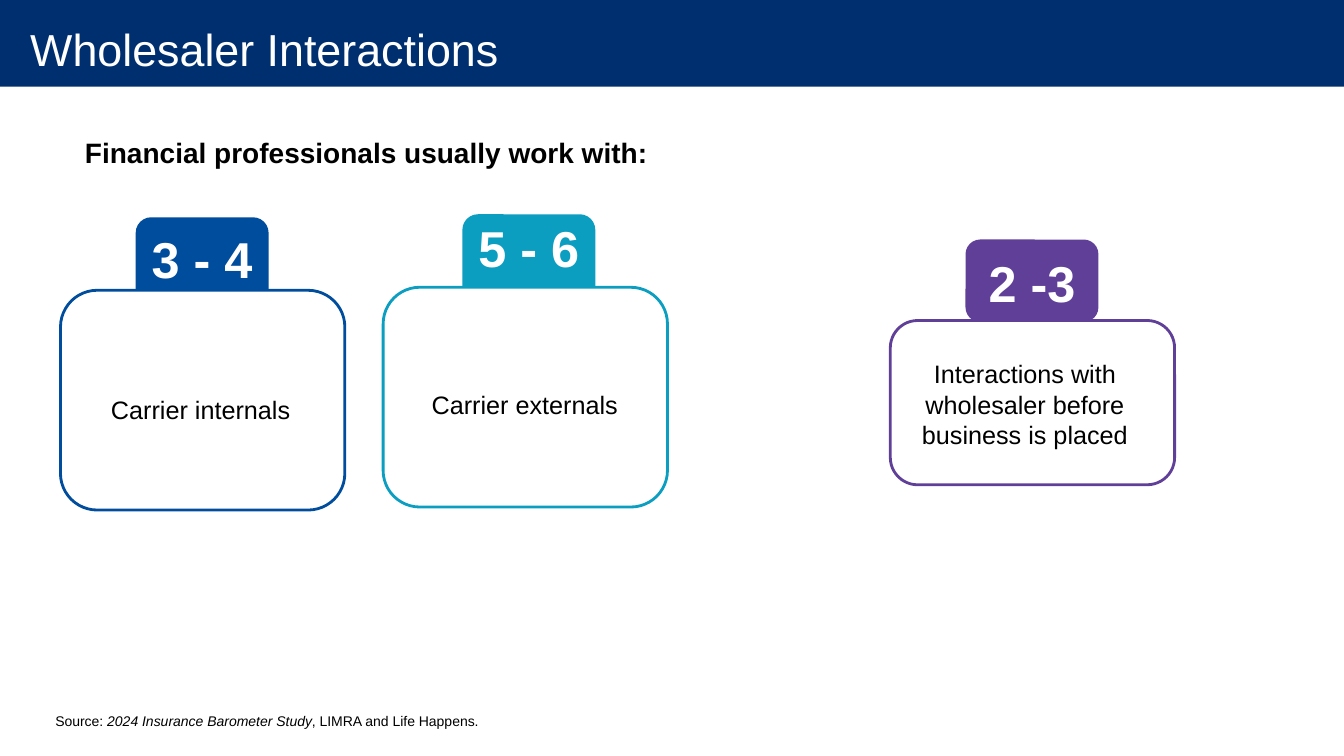
from dataclasses import dataclass

from pptx import Presentation, util as u
from pptx.dml.color import RGBColor
from pptx.enum import shapes, text


@dataclass(frozen=True)
class Theme:
    font: str = "Arial"
    navy: str = "002F70"
    blue: str = "004C9D"
    teal: str = "0B9EC1"
    purple: str = "603F99"
    white: str = "FFFFFF"
    black: str = "000000"
    title: int = 32
    number: int = 36
    heading: int = 20
    label: int = 18
    source: int = 10


T = Theme()


def place(s, x, y, w, h):
    s.left, s.top, s.width, s.height = (u.Inches(v) for v in (x, y, w, h))


def style(p, size, color, bold=False):
    for r in p.runs:
        r.font.name = T.font
        r.font.size = u.Pt(size)
        r.font.color.rgb = RGBColor.from_string(color)
        r.font.bold = bold


def add_box(slide, kind, box, fill, line=None):
    s = slide.shapes.add_shape(kind, *(u.Inches(v) for v in box))
    s.shadow.inherit = False
    s.fill.solid()
    s.fill.fore_color.rgb = RGBColor.from_string(fill)
    if line:
        s.line.color.rgb = RGBColor.from_string(line)
        s.line.width = u.Pt(2)
    else:
        s.line.fill.background()
    return s


def add_text(slide, box, content, size, color, bold=False, align=text.PP_ALIGN.CENTER):
    s = slide.shapes.add_textbox(*(u.Inches(v) for v in box))
    tf = s.text_frame
    tf.word_wrap = True
    p = tf.paragraphs[0]
    p.text = content
    p.alignment = align
    style(p, size, color, bold)
    return p


def add_title(slide, box, content):
    x, y, w, h = box
    bar = add_box(slide, shapes.MSO_SHAPE.RECTANGLE, (x, y, w, 0.86), T.navy)
    title = slide.shapes.title
    title._element.addprevious(bar._element)
    place(title, x, y, w, h)
    tf = title.text_frame
    tf.text = content
    tf.auto_size = text.MSO_AUTO_SIZE.NONE
    tf.word_wrap = False
    tf.vertical_anchor = text.MSO_ANCHOR.MIDDLE
    tf.margin_left, tf.margin_right = u.Inches(0.3), u.Inches(0.2)
    tf.margin_top = tf.margin_bottom = 0
    p = tf.paragraphs[0]
    p.alignment = text.PP_ALIGN.LEFT
    style(p, T.title, T.white)


def add_card(slide, box, color, number, label, tab, number_dy, label_box, tab_in_front=False):
    x, y, w, h = box
    tab_dx, tab_dy, tab_h = tab
    tab_w = 1.29
    label_dx, label_dy, label_w, label_h = label_box
    rounded = shapes.MSO_SHAPE.ROUNDED_RECTANGLE
    layers = [((x + tab_dx, y + tab_dy, tab_w, tab_h), color), (box, T.white)]
    for layer, fill in reversed(layers) if tab_in_front else layers:
        add_box(slide, rounded, layer, fill, color)
    add_text(slide, (x + label_dx, y + label_dy, label_w, label_h), label, T.label, T.black)
    add_text(slide, (x + tab_dx, y + number_dy, tab_w, 0.71), number, T.number, T.white, True)


def add_source(slide, box):
    p = add_text(slide, box, "Source: ", T.source, T.black, align=text.PP_ALIGN.LEFT)
    study = p.add_run()
    study.text = "2024 Insurance Barometer Study"
    p.add_run().text = ", LIMRA and Life Happens."
    style(p, T.source, T.black)
    study.font.italic = True


def main():
    prs = Presentation()
    prs.slide_width, prs.slide_height = u.Inches(13.33), u.Inches(7.5)
    slide = prs.slides.add_slide(prs.slide_layouts[5])
    add_title(slide, (0, 0, 13.33, 0.97), "Wholesaler Interactions")
    add_source(slide, (0.45, 7.02, 7.44, 0.27))
    add_text(slide, (0.3, 1.3, 6.67, 0.44), "Financial professionals usually work with:",
             T.heading, T.black, True)
    add_card(slide, (0.6, 2.88, 2.82, 2.18), T.blue, "3 - 4", "Carrier internals",
             (0.76, -0.71, 0.84), -0.67, (0.2, 0.98, 2.38, 0.4))
    add_card(slide, (3.8, 2.85, 2.82, 2.18), T.teal, "5 - 6", "Carrier externals",
             (0.8, -0.71, 0.84), -0.75, (0.28, 0.96, 2.25, 0.4))
    add_card(slide, (8.83, 3.18, 2.82, 1.63), T.purple, "2 -3",
             "Interactions with wholesaler before business is placed",
             (0.76, -0.79, 0.79), -0.73, (0.16, 0.33, 2.35, 1.01), True)
    prs.save("out.pptx")


if __name__ == "__main__":
    main()
